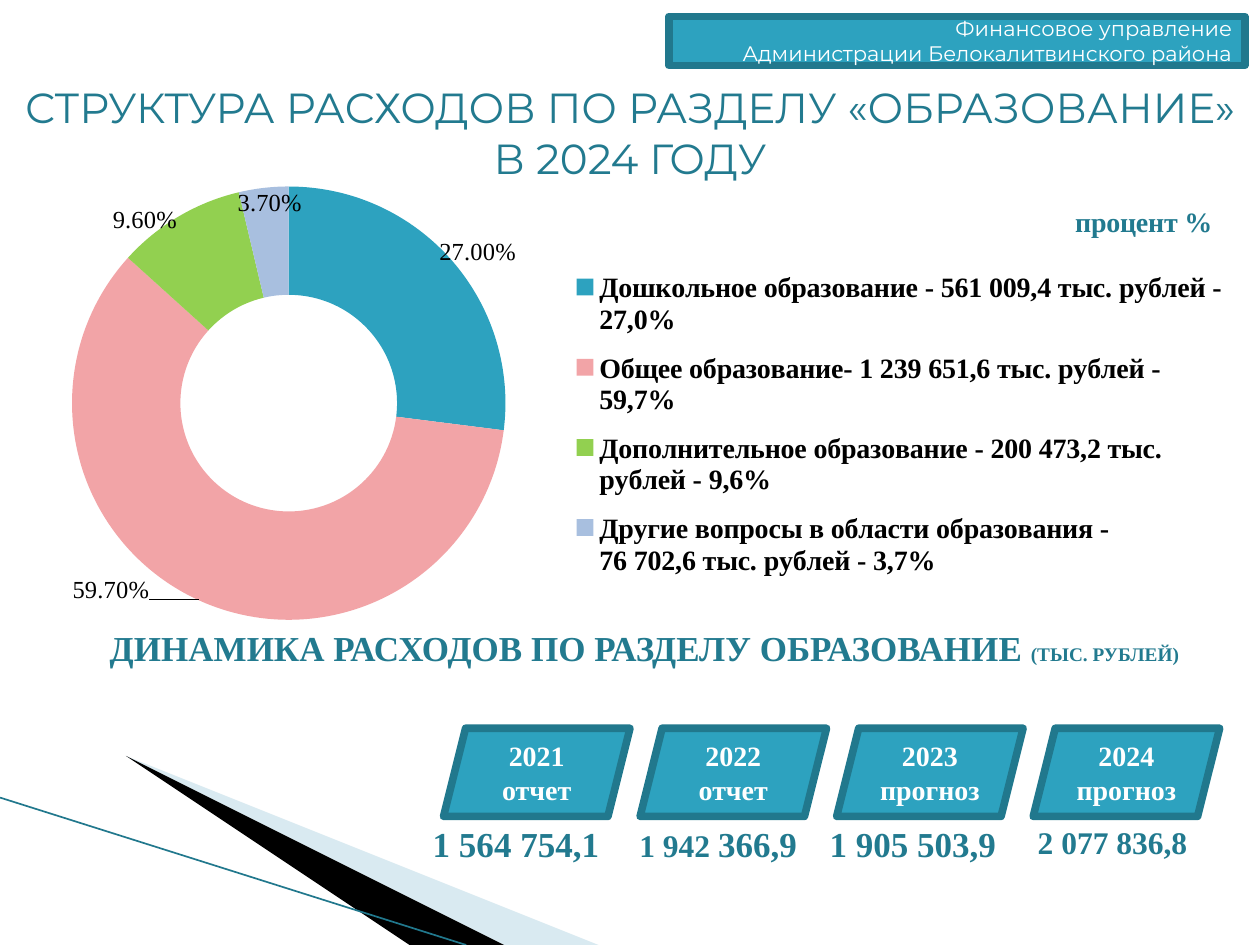
from dataclasses import dataclass

from lxml.etree import SubElement
from pptx import Presentation
from pptx.chart.data import CategoryChartData
from pptx.dml.color import RGBColor
from pptx.enum.chart import XL_CHART_TYPE as ChartType, XL_LEGEND_POSITION as LegendPosition
from pptx.enum.shapes import MSO_CONNECTOR as Connector, MSO_SHAPE as Shape
from pptx.enum.text import MSO_ANCHOR as Anchor, MSO_AUTO_SIZE as AutoSize, PP_ALIGN as Align
from pptx.oxml.ns import qn
from pptx.util import Inches, Pt

TEAL = RGBColor(0x2D, 0xA2, 0xBF)
BORDER = RGBColor(0x21, 0x78, 0x8D)
HEADING = RGBColor(0x22, 0x7A, 0x8F)
PINK = RGBColor(0xF2, 0xA4, 0xA7)
GREEN = RGBColor(0x92, 0xD0, 0x50)
LAVENDER = RGBColor(0xA8, 0xBF, 0xDF)
PALE_BLUE = RGBColor(0xA0, 0xCB, 0xDC)
WHITE = RGBColor(0xFF, 0xFF, 0xFF)
BLACK = RGBColor(0, 0, 0)
SERIF = "Times New Roman"
SANS = "Montserrat"


@dataclass
class Section:
    label: str
    share: float
    color: RGBColor
    label_shift: tuple[float, float]


@dataclass
class Year:
    caption: str
    amount: list[tuple[str, int]]
    amount_left: float
    amount_width: float


SECTIONS = [
    Section("Дошкольное образование - 561 009,4 тыс. рублей - 27,0%", 0.27, TEAL, (0.055, -0.1)),
    Section("Общее образование- 1 239 651,6 тыс. рублей - 59,7%", 0.597, PINK, (-0.09, 0.09)),
    Section("Дополнительное образование - 200 473,2 тыс. рублей - 9,6%", 0.096, GREEN, (-0.05, -0.1)),
    Section("Другие вопросы в области образования -\n76 702,6 тыс. рублей - 3,7%", 0.037, LAVENDER, (0, -0.09)),
]
YEARS = [
    Year("2021 отчет", [("1 564 754,1", 20)], 3.12, 1.95),
    Year("2022 отчет", [("1 942 ", 18), ("366,9", 20)], 4.84, 1.72),
    Year("2023 прогноз", [("1 905 503,9", 20)], 6.48, 1.53),
    Year("2024 прогноз", [("2 077 836,8", 18)], 8.13, 1.4),
]


def style_font(font, size: float, color: RGBColor, name: str = SERIF, bold: bool = False) -> None:
    font.size, font.name, font.bold = Pt(size), name, bold
    font.color.rgb = color


def add_run(paragraph, text: str, size: float, color: RGBColor, name: str = SERIF, bold: bool = False) -> None:
    run = paragraph.add_run()
    run.text = text
    style_font(run.font, size, color, name, bold)


def add_text(slide, left: float, top: float, width: float, height: float, runs: list[tuple[str, int]]) -> None:
    box = slide.shapes.add_textbox(Inches(left), Inches(top), Inches(width), Inches(height))
    box.text_frame.word_wrap = True
    paragraph = box.text_frame.paragraphs[0]
    paragraph.alignment = Align.CENTER
    for text, size in runs:
        add_run(paragraph, text, size, HEADING, bold=True)


def add_panel(slide, kind, left: float, top: float, width: float, height: float):
    """Teal shape with a thick border and rounded corners."""
    panel = slide.shapes.add_shape(kind, Inches(left), Inches(top), Inches(width), Inches(height))
    panel.shadow.inherit = False
    panel.fill.solid()
    panel.fill.fore_color.rgb = TEAL
    panel.line.color.rgb = BORDER
    panel.line.width = Pt(4.33)
    SubElement(panel.line._get_or_add_ln(), qn("a:round"))
    panel.text_frame.word_wrap = True
    panel.text_frame.vertical_anchor = Anchor.MIDDLE
    return panel


def add_wedge(slide, points: list[tuple[float, float]], color: RGBColor, opacity: int = 100) -> None:
    builder = slide.shapes.build_freeform(*points[0], scale=Inches(1))
    builder.add_line_segments(points[1:], close=True)
    wedge = builder.convert_to_shape()
    wedge.shadow.inherit = False
    wedge.fill.solid()
    wedge.fill.fore_color.rgb = color
    wedge.line.fill.background()
    if opacity < 100:
        color_element = wedge._element.spPr.find(qn("a:solidFill"))[0]
        SubElement(color_element, qn("a:alpha")).set("val", str(opacity * 1000))


def add_corner_decoration(slide) -> None:
    add_wedge(slide, [(0.55, 6.5), (5.95, 7.5), (4.56, 7.5)], PALE_BLUE, 40)
    add_wedge(slide, [(0.53, 6.49), (4.57, 7.5), (3.72, 7.5)], BLACK)
    line = slide.shapes.add_connector(
        Connector.STRAIGHT, Inches(0), Inches(6.33), Inches(3.7), Inches(7.5))
    line.line.color.rgb = BORDER
    line.line.width = Pt(0.95)
    SubElement(line._element.spPr, qn("a:effectLst"))


def set_layout(parent, index: int, edge: bool, **values: float) -> None:
    """Place a chart part by fractions of the chart's size."""
    for old in parent.findall(qn("c:layout")):
        parent.remove(old)
    layout = SubElement(parent, qn("c:layout"))
    manual = SubElement(layout, qn("c:manualLayout"))
    if "w" in values and parent.tag == qn("c:plotArea"):
        SubElement(manual, qn("c:layoutTarget")).set("val", "inner")
    if edge:
        for mode in ("xMode", "yMode"):
            SubElement(manual, qn(f"c:{mode}")).set("val", "edge")
    for key, value in values.items():
        SubElement(manual, qn(f"c:{key}")).set("val", str(value))
    parent.insert(index, layout)


def add_spending_chart(slide) -> None:
    data = CategoryChartData(number_format="0.00%")
    data.categories = [section.label for section in SECTIONS]
    data.add_series("Series 1", [section.share for section in SECTIONS])
    chart = slide.shapes.add_chart(
        ChartType.DOUGHNUT, Inches(0.16), Inches(1.48), Inches(9.69), Inches(3.44), data).chart
    style_font(chart.font, 18, BLACK)

    add_run(chart.chart_title.text_frame.paragraphs[0], "процент %", 16, HEADING, bold=True)
    chart.chart_title.include_in_layout = False
    set_layout(chart.chart_title._element, 1, True, x=0.86, y=0.03)

    chart.has_legend = True
    chart.legend.position = LegendPosition.RIGHT
    chart.legend.include_in_layout = False
    style_font(chart.legend.font, 16, BLACK, bold=True)
    set_layout(chart.legend._element, 1, True, x=0.45, y=0.16, w=0.54, h=0.78)

    plot = chart.plots[0]
    plot.vary_by_categories = True
    set_layout(chart._chartSpace.chart.plotArea, 0, True, x=0.03, y=0, w=0.38, h=1)
    plot.has_data_labels = True
    labels = plot.data_labels
    labels.show_value, labels.show_percentage = True, False
    labels.number_format, labels.number_format_is_linked = "0.00%", False
    style_font(labels.font, 14, BLACK)

    series = plot.series[0]
    for index, section in enumerate(SECTIONS):
        point = series.points[index]
        point.format.fill.solid()
        point.format.fill.fore_color.rgb = section.color
        point.format.line.fill.background()
        style_font(point.data_label.font, 14, BLACK)
    for label, section in zip(series._element.iter(qn("c:dLbl")), SECTIONS):
        x, y = section.label_shift
        set_layout(label, 1, False, x=x, y=y)


def add_title(slide) -> None:
    title = slide.shapes.title
    title.left, title.top, title.width, title.height = 0, Inches(0.6), Inches(10), Inches(0.91)
    frame = title.text_frame
    frame.auto_size = AutoSize.NONE
    frame.vertical_anchor = Anchor.TOP
    paragraph = frame.paragraphs[0]
    paragraph.alignment = Align.CENTER
    add_run(paragraph, "СТРУКТУРА РАСХОДОВ ПО РАЗДЕЛУ «ОБРАЗОВАНИЕ» В 2024 ГОДУ", 24, HEADING, SANS)


def main() -> None:
    presentation = Presentation()
    presentation.slide_width, presentation.slide_height = Inches(10), Inches(7.5)
    slide = presentation.slides.add_slide(presentation.slide_layouts[5])
    add_corner_decoration(slide)

    header = add_panel(slide, Shape.RECTANGLE, 5.31, 0.13, 4.57, 0.39).text_frame
    for index, text in enumerate(["Финансовое управление", "Администрации Белокалитвинского района"]):
        paragraph = header.add_paragraph() if index else header.paragraphs[0]
        paragraph.alignment = Align.RIGHT
        add_run(paragraph, text, 12, WHITE, SANS)

    add_title(slide)
    add_spending_chart(slide)
    add_text(slide, 0.23, 4.92, 9.77, 0.44,
             [("ДИНАМИКА РАСХОДОВ ПО РАЗДЕЛУ ОБРАЗОВАНИЕ ", 20), ("(ТЫС. РУБЛЕЙ)", 11)])
    for index, year in enumerate(YEARS):
        panel = add_panel(slide, Shape.PARALLELOGRAM, 3.52 + 1.56 * index, 5.78, 1.48, 0.7)
        paragraph = panel.text_frame.paragraphs[0]
        paragraph.alignment = Align.CENTER
        add_run(paragraph, year.caption, 16, WHITE, bold=True)
        add_text(slide, year.amount_left, 6.48, year.amount_width, 0.44, year.amount)
    presentation.save("out.pptx")


if __name__ == "__main__":
    main()
